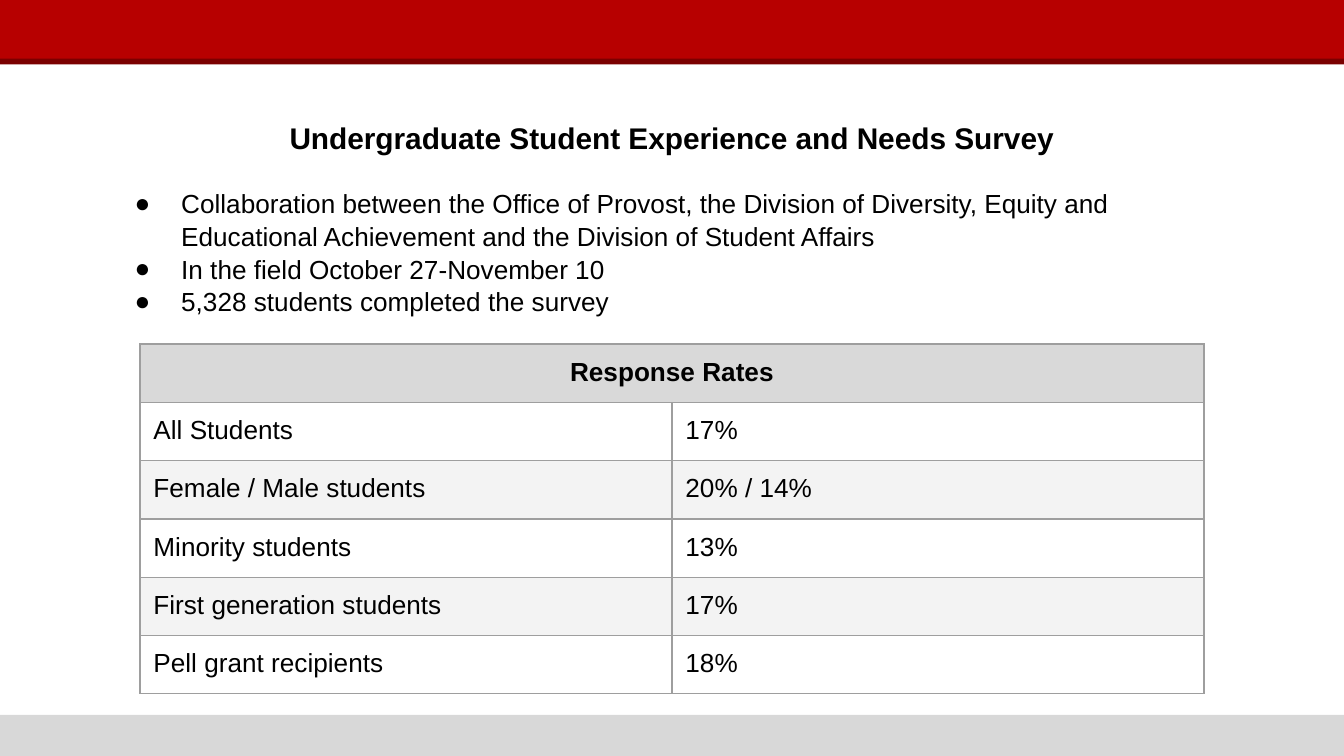
"""Build the survey overview slide with its response rate table."""
from dataclasses import dataclass

from lxml import etree
from pptx import Presentation
from pptx import util as u
from pptx.dml.color import RGBColor
from pptx.enum import shapes, text
from pptx.oxml import ns


@dataclass(frozen=True)
class Theme:
    font: str = "Arial"
    title_size: int = 16
    body_size: int = 14
    ink: str = "000000"
    red: str = "B70000"
    dark_red: str = "7B0000"
    footer: str = "D8D8D8"
    header: str = "D9D9D9"
    band: str = "F3F3F3"
    border: str = "9E9E9E"


theme = Theme()


def style(para, size, bold=False):
    """Set the font of a whole paragraph."""
    para.font.name = theme.font
    para.font.size = u.Pt(size)
    para.font.bold = bold
    para.font.color.rgb = RGBColor.from_string(theme.ink)


def add_child(parent, tag, **attributes):
    """Append a DrawingML element."""
    return etree.SubElement(parent, ns.qn(tag), attributes)


deck = Presentation()
deck.slide_width, deck.slide_height = u.Pt(720), u.Pt(405)
page = deck.slides.add_slide(deck.slide_layouts[6])

for top, height, color in [
    (383, 22, theme.footer),
    (0, 32, theme.red),
    (31.5, 3, theme.dark_red),
]:
    bar = page.shapes.add_shape(
        shapes.MSO_SHAPE.RECTANGLE, 0, u.Pt(top), u.Pt(720), u.Pt(height)
    )
    bar.shadow.inherit = False
    bar.fill.solid()
    bar.fill.fore_color.rgb = RGBColor.from_string(color)
    bar.line.fill.background()

box = page.shapes.add_textbox(u.Pt(54), u.Pt(56), u.Pt(612), u.Pt(75))
frame = box.text_frame
frame.word_wrap = True
frame.margin_left = frame.margin_right = u.Pt(7.2)
frame.margin_top = frame.margin_bottom = u.Pt(7.2)

title = frame.paragraphs[0]
title.text = "Undergraduate Student Experience and Needs Survey"
title.alignment = text.PP_ALIGN.CENTER
title.line_spacing = 1.04
title.space_after = u.Pt(16.8)
style(title, theme.title_size, bold=True)

for point in [
    "Collaboration between the Office of Provost, the Division of Diversity, "
    "Equity and Educational Achievement and the Division of Student Affairs",
    "In the field October 27-November 10",
    "5,328 students completed the survey",
]:
    para = frame.add_paragraph()
    para.text = point
    para.line_spacing = 1.04
    properties = para._p.get_or_add_pPr()
    properties.set("marL", str(u.Pt(36)))
    properties.set("indent", str(u.Pt(-25)))
    add_child(add_child(properties, "a:buClr"), "a:srgbClr", val=theme.ink)
    add_child(properties, "a:buFont", typeface=theme.font)
    add_child(properties, "a:buChar", char="●")
    style(para, theme.body_size)

rows = [
    ("Response Rates", ""),
    ("All Students", "17%"),
    ("Female / Male students", "20% / 14%"),
    ("Minority students", "13%"),
    ("First generation students", "17%"),
    ("Pell grant recipients", "18%"),
]
row_height, column_width = 30.2, 285
table = page.shapes.add_table(
    len(rows), 2, u.Pt(75), u.Pt(184.3),
    u.Pt(2 * column_width), u.Pt(len(rows) * row_height),
).table
for column in table.columns:
    column.width = u.Pt(column_width)

for row_index, row in enumerate(rows):
    is_header = row_index == 0
    table.rows[row_index].height = u.Pt(row_height)
    for column_index, value in enumerate(row):
        cell = table.cell(row_index, column_index)
        cell.margin_left = cell.margin_right = u.Pt(7.2)
        cell.margin_top = cell.margin_bottom = u.Pt(7.2)
        for side in ("a:lnL", "a:lnR", "a:lnT", "a:lnB"):
            edge = add_child(cell._tc.get_or_add_tcPr(), side, w=str(u.Pt(0.75)))
            add_child(add_child(edge, "a:solidFill"), "a:srgbClr", val=theme.border)
        if is_header or row_index % 2 == 0:
            cell.fill.solid()
            color = theme.header if is_header else theme.band
            cell.fill.fore_color.rgb = RGBColor.from_string(color)
        else:
            cell.fill.background()
        cell.text = value
        para = cell.text_frame.paragraphs[0]
        para.alignment = text.PP_ALIGN.CENTER if is_header else text.PP_ALIGN.LEFT
        style(para, theme.body_size, bold=is_header)

table.cell(0, 0).merge(table.cell(0, 1))

deck.save("out.pptx")
